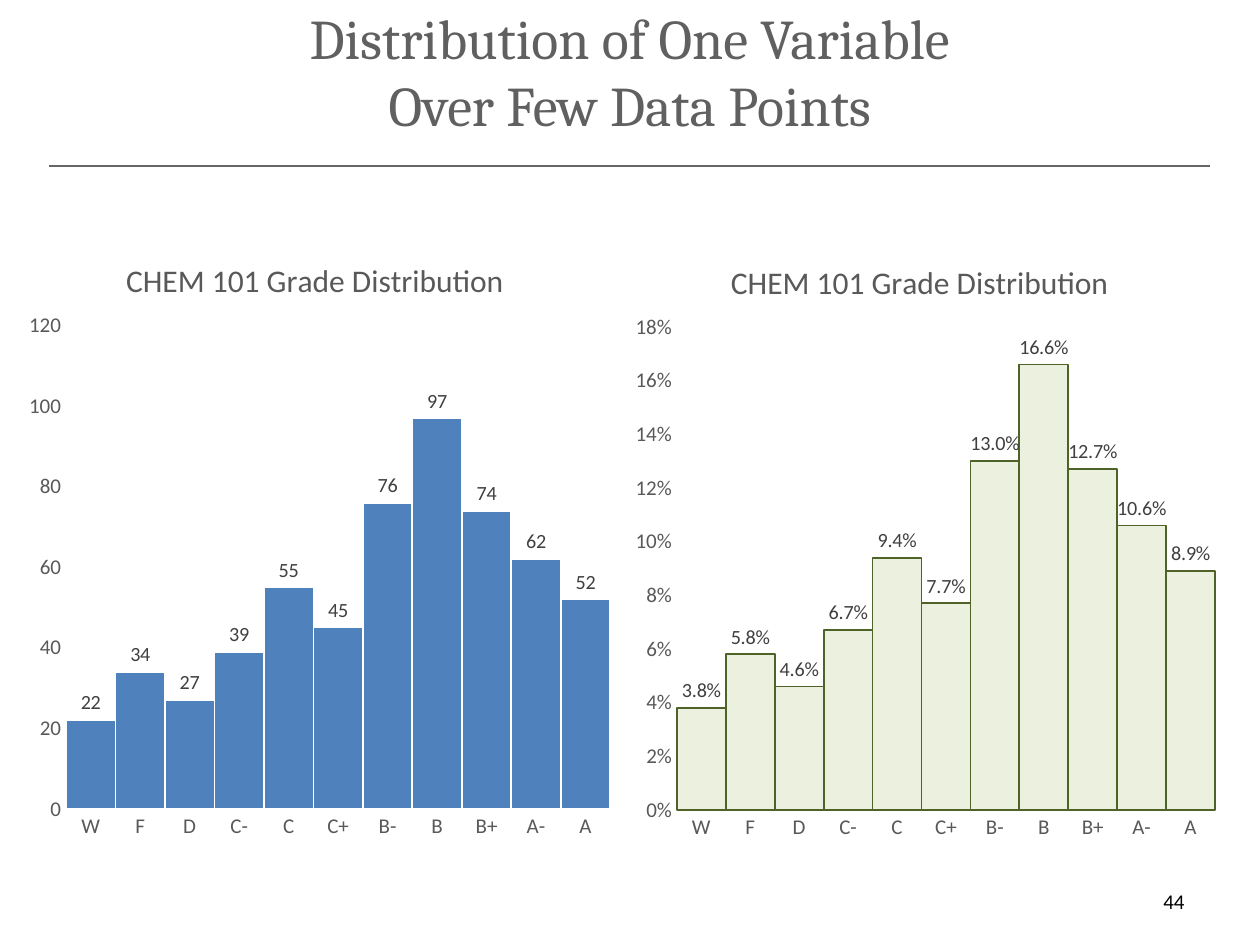
from lxml import etree
from pptx import Presentation
from pptx import util as u
from pptx.chart.data import CategoryChartData
from pptx.dml.color import RGBColor
from pptx.enum import chart as charts, shapes, text
from pptx.oxml import parse_xml
from pptx.oxml.ns import nsdecls, qn

WIDTH, HEIGHT = 10, 7.5
COLORS = {"title": "606060", "rule": "666666", "axis_text": "595959",
          "axis_line": "D9D9D9", "label": "404040", "black": "000000",
          "blue": "4F81BD", "white": "FFFFFF", "pale": "EBF1DE", "green": "4F6228"}
GRADES = ["W", "F", "D", "C-", "C", "C+", "B-", "B", "B+", "A-", "A"]
CHARTS = [
    dict(left=0.14, top=1.76, values=[22, 34, 27, 39, 55, 45, 76, 97, 74, 62, 52],
         fill="blue", line="white", maximum=120, step=20,
         axis_format="General", label_format="General", plot_x=0.08, plot_width=0.9),
    dict(left=4.94, top=1.77,
         values=[0.038, 0.058, 0.046, 0.067, 0.094, 0.077, 0.13, 0.166, 0.127, 0.106, 0.089],
         fill="pale", line="green", maximum=0.18, step=0.02,
         axis_format="0%", label_format="0.0%", plot_x=0.09, plot_width=0.89),
]


def color(name):
    """Return the named colour."""
    return RGBColor.from_string(COLORS[name])


def set_font(font, size, name, shade):
    """Format a font."""
    font.size, font.name, font.bold = u.Pt(size), name, False
    font.color.rgb = color(shade)


def set_layout(element, **shares):
    """Place a chart part by shares of the chart's size."""
    for old in element.findall(qn("c:layout")):
        element.remove(old)
    target = '<c:layoutTarget val="inner"/>' if "w" in shares else ""
    modes = "".join(f'<c:{axis}Mode val="edge"/>' for axis in "xy")
    sizes = "".join(f'<c:{key} val="{value}"/>' for key, value in shares.items())
    layout = parse_xml(f'<c:layout {nsdecls("c")}><c:manualLayout>{target}{modes}{sizes}'
                       '</c:manualLayout></c:layout>')
    before = element.find(qn("c:tx"))
    element.insert(0 if before is None else 1, layout)


def add_title(slide):
    """Fill the title placeholder."""
    title = slide.shapes.title
    title.left, title.top = u.Inches(0.075 * WIDTH), 0
    title.width, title.height = u.Inches(0.85 * WIDTH), u.Inches(0.15 * HEIGHT)
    frame = title.text_frame
    frame.text = "Distribution of One Variable\vOver Few Data Points"
    frame.vertical_anchor = text.MSO_ANCHOR.MIDDLE
    paragraph = frame.paragraphs[0]
    paragraph.alignment = text.PP_ALIGN.CENTER
    set_font(paragraph.font, 32, "Cambria", "title")


def add_rule(slide):
    """Draw the line under the title."""
    y = u.Inches(1.32)
    rule = slide.shapes.add_connector(shapes.MSO_CONNECTOR.STRAIGHT,
                                      u.Inches(0.39), y, u.Inches(9.6), y)
    rule.line.color.rgb, rule.line.width = color("rule"), u.Pt(1.06)
    etree.SubElement(rule._element.spPr, qn("a:effectLst"))


def add_page_number(slide):
    """Write the page number."""
    box = slide.shapes.add_textbox(u.Inches(7.17), u.Inches(6.95), u.Inches(2.33), u.Inches(0.4))
    frame = box.text_frame
    frame.word_wrap, frame.vertical_anchor = True, text.MSO_ANCHOR.MIDDLE
    frame.text = "44"
    paragraph = frame.paragraphs[0]
    paragraph.alignment = text.PP_ALIGN.RIGHT
    set_font(paragraph.font, 12, "Calibri", "black")


def format_axis(axis):
    """Format what both axes share."""
    axis.has_major_gridlines = False
    axis.major_tick_mark = axis.minor_tick_mark = charts.XL_TICK_MARK.NONE
    set_font(axis.tick_labels.font, 12, "Calibri", "axis_text")


def add_histogram(slide, left, top, values, fill, line, maximum, step,
                  axis_format, label_format, plot_x, plot_width):
    """Add a column chart of the grades without gaps."""
    data = CategoryChartData()
    data.categories = GRADES
    data.add_series("Series 1", values)
    chart = slide.shapes.add_chart(charts.XL_CHART_TYPE.COLUMN_CLUSTERED, u.Inches(left),
                                   u.Inches(top), u.Inches(4.8), u.Inches(5), data).chart
    set_font(chart.font, 10, "Calibri", "black")
    chart.has_legend = False
    title = chart.chart_title
    title.text_frame.text = "CHEM 101 Grade Distribution"
    set_font(title.text_frame.paragraphs[0].font, 18, "Calibri", "axis_text")
    set_layout(title._element, x=0.17, y=0.05)
    set_layout(chart._chartSpace.chart.plotArea, x=plot_x, y=0.165, w=plot_width, h=0.767)

    format_axis(chart.category_axis)
    chart.category_axis.format.line.color.rgb = color("axis_line")
    chart.category_axis.format.line.width = u.Pt(0.75)
    value_axis = chart.value_axis
    format_axis(value_axis)
    value_axis.format.line.fill.background()
    value_axis.minimum_scale, value_axis.maximum_scale = 0, maximum
    value_axis.major_unit = step
    value_axis.tick_labels.number_format = axis_format
    value_axis.tick_labels.number_format_is_linked = False

    plot = chart.plots[0]
    plot.vary_by_categories, plot.gap_width, plot.overlap = False, 0, -27
    series = plot.series[0]
    series.format.fill.solid()
    series.format.fill.fore_color.rgb = color(fill)
    series.format.line.color.rgb, series.format.line.width = color(line), u.Pt(1)
    labels = series.data_labels
    labels.show_value = True
    labels.position = charts.XL_LABEL_POSITION.OUTSIDE_END
    labels.number_format, labels.number_format_is_linked = label_format, False
    set_font(labels.font, 11.5, "Calibri", "label")


def main():
    """Build the slide and save it."""
    presentation = Presentation()
    presentation.slide_width, presentation.slide_height = u.Inches(WIDTH), u.Inches(HEIGHT)
    slide = presentation.slides.add_slide(presentation.slide_layouts[5])
    add_rule(slide)
    add_title(slide)
    add_page_number(slide)
    for histogram in CHARTS:
        add_histogram(slide, **histogram)
    presentation.save("out.pptx")


if __name__ == "__main__":
    main()
